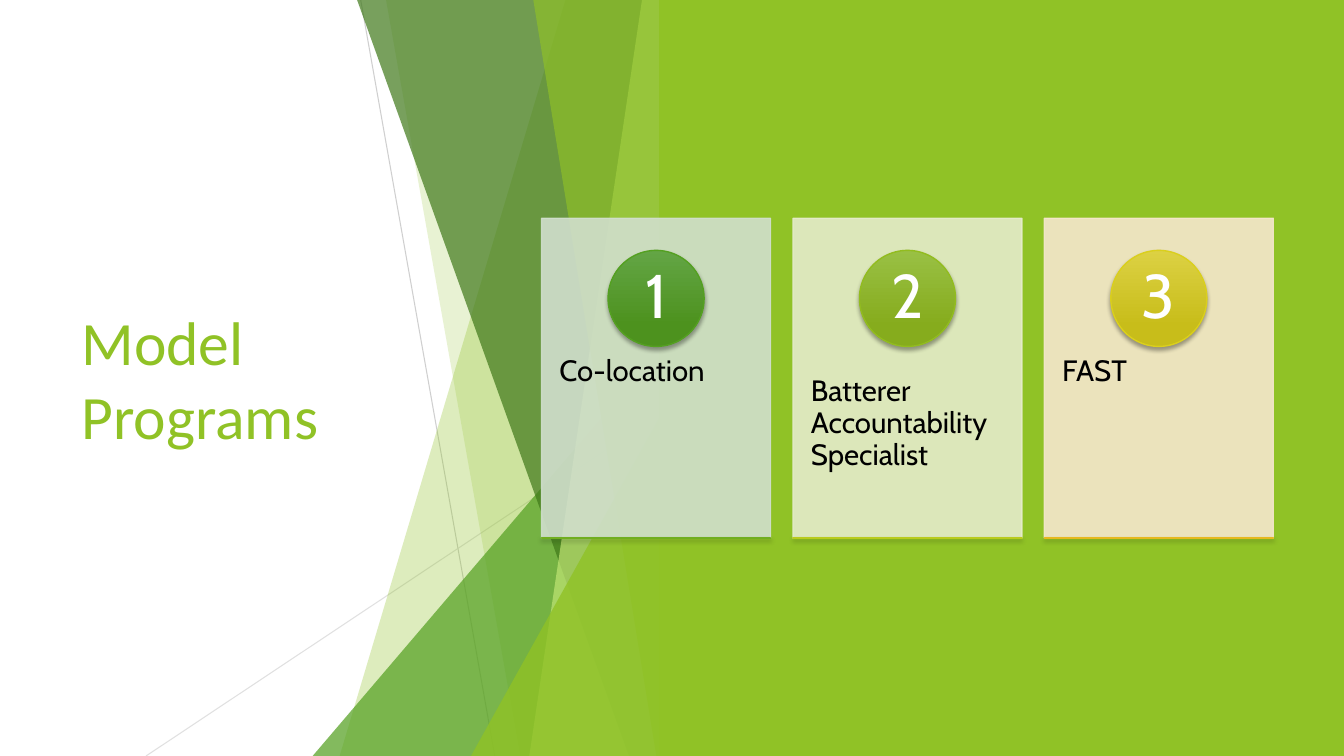
from lxml.etree import SubElement
from pptx import Presentation
from pptx.dml.color import RGBColor
from pptx.enum.shapes import MSO_CONNECTOR, MSO_SHAPE
from pptx.enum.text import MSO_ANCHOR, MSO_AUTO_SIZE, PP_ALIGN
from pptx.oxml.ns import qn
from pptx.util import Cm, Pt

WHITE = RGBColor(0xFF, 0xFF, 0xFF)
BLACK = RGBColor(0x00, 0x00, 0x00)
LIME = RGBColor(0x90, 0xC2, 0x26)
GREEN = RGBColor(0x54, 0xA0, 0x21)
FOREST = RGBColor(0x3F, 0x78, 0x19)
PALE_LIME = RGBColor(0xC0, 0xE4, 0x74)
GREY = RGBColor(0xBF, 0xBF, 0xBF)
LIGHT_GREY = RGBColor(0xD9, 0xD9, 0xD9)
SAGE = RGBColor(0xD1, 0xDF, 0xCD)
MIST = RGBColor(0xE5, 0xEC, 0xCB)
CREAM = RGBColor(0xF5, 0xE7, 0xCD)

# top offset, bottom offset, apex height, colour, opacity
FACETS = [
    (2.67, 8.36, 0, LIME, 30),
    (7.19, 3.81, 0, LIME, 20),
    (0, 9.04, 8.46, GREEN, 72),
    (7.92, 1.07, 0, FOREST, 70),
    (0.74, 3.58, 0, PALE_LIME, 70),
    (3.48, 0.38, 0, LIME, 65),
    (0, 5.05, 9.98, LIME, 80),
]
CARDS = [
    ("Co-location", SAGE, ("63A545", "4D921E", "54A021"), ("7BB244", "679F1E", "71AE20")),
    ("Batterer Accountability Specialist", MIST,
     ("99C044", "86AC1D", "92BC1F"), ("BDCE43", "A9BA1B", "B9CB1E")),
    ("FAST", CREAM, ("DCD143", "C8BD1A", "DACF1C"), ("E7BC43", "D2A91B", "E6B91E")),
]


def set_alpha(s, percent):
    for color in s.element.spPr.findall(".//" + qn("a:srgbClr")):
        SubElement(color, qn("a:alpha"), val=str(percent * 1000))


def paint(s, color, alpha=100, outlined=False):
    s.shadow.inherit = False
    s.fill.solid()
    s.fill.fore_color.rgb = color
    if outlined:
        s.line.color.rgb = color
        s.line.width = Pt(1)
    else:
        s.line.fill.background()
    if alpha < 100:
        set_alpha(s, alpha)


def paint_raised(s, colors):
    start, end, edge = map(RGBColor.from_string, colors)
    s.fill.gradient()
    s.fill.gradient_angle = 270
    for stop, color, position in zip(s.fill.gradient_stops, (start, end), (0, 0.78)):
        stop.color.rgb = color
        stop.position = position
    s.line.color.rgb = edge
    s.line.width = Pt(1)
    s.shadow.inherit = False
    effects = s.element.spPr.find(qn("a:effectLst"))
    shadow = SubElement(effects, qn("a:outerShdw"), blurRad=str(Pt(3)), dist=str(Pt(2)),
                        dir="5400000", algn="ctr", rotWithShape="0")
    color = SubElement(shadow, qn("a:srgbClr"), val="000000")
    SubElement(color, qn("a:alpha"), val="35000")


def add_run(p, text, font, size, color):
    r = p.add_run()
    r.text = text
    r.font.name = font
    r.font.size = Pt(size)
    r.font.color.rgb = color


def add_text(shapes, box, text, size, color, margins, align, anchor):
    tf = shapes.add_textbox(*box).text_frame
    tf.word_wrap = True
    tf.vertical_anchor = anchor
    tf.margin_left = tf.margin_right = margins[0]
    tf.margin_top = tf.margin_bottom = margins[1]
    p = tf.paragraphs[0]
    p.alignment = align
    p.line_spacing = 0.9
    add_run(p, text, "Cabin", size, color)


def add_title(slide, left, top, width, height):
    title = slide.shapes.title
    title.left, title.top, title.width, title.height = left, top, width, height
    tf = title.text_frame
    tf.word_wrap = True
    tf.auto_size = MSO_AUTO_SIZE.NONE
    tf.vertical_anchor = MSO_ANCHOR.MIDDLE
    p = tf.paragraphs[0]
    p.alignment = PP_ALIGN.LEFT
    add_run(p, "Model Programs", "Calibri", 44, LIME)


def add_facets(shapes, left, top, width, height):
    right, bottom = left + width, top + height
    lines = [
        (left + Cm(5.41), top, left + Cm(8.79), bottom, GREY, 75),
        (right, top + Cm(10.24), left, bottom, LIGHT_GREY, 80),
    ]
    for x1, y1, x2, y2, color, alpha in lines:
        line = shapes.add_connector(MSO_CONNECTOR.STRAIGHT, x1, y1, x2, y2)
        line.line.color.rgb = color
        line.line.width = Pt(0.75)
        SubElement(line.element.spPr, qn("a:effectLst"))
        set_alpha(line, alpha)
    for top_offset, bottom_offset, apex, color, alpha in FACETS:
        if apex:
            s = shapes.add_shape(MSO_SHAPE.ISOSCELES_TRIANGLE, right - Cm(bottom_offset),
                                 top + Cm(apex), Cm(bottom_offset), height - Cm(apex))
            s.adjustments[0] = 1
        else:
            outline = shapes.build_freeform(right - Cm(top_offset), top)
            outline.add_line_segments([(right, top), (right, bottom),
                                       (right - Cm(bottom_offset), bottom)])
            s = outline.convert_to_shape()
        paint(s, color, alpha)


def add_panel(shapes, left, top, width, height):
    paint(shapes.add_shape(MSO_SHAPE.RECTANGLE, left, top, width, height), LIME)


def add_card(shapes, left, top, width, height, number, card):
    text, color, badge_colors, bar_colors = card
    paint(shapes.add_shape(MSO_SHAPE.RECTANGLE, left, top, width, height), color, 90, True)
    add_text(shapes, (left, top + Cm(3.07), width, Cm(4.83)), text, 21, BLACK,
             (Cm(0.45), Cm(0.91)), PP_ALIGN.LEFT, MSO_ANCHOR.TOP)
    size, inset = Cm(2.42), Cm(0.35)
    x, y = left + (width - size) // 2, top + Cm(0.81)
    paint_raised(shapes.add_shape(MSO_SHAPE.OVAL, x, y, size, size), badge_colors)
    inner = size - 2 * inset
    add_text(shapes, (x + inset, y + inset, inner, inner), str(number), 44, WHITE,
             (Cm(0.18), Cm(0.03)), PP_ALIGN.CENTER, MSO_ANCHOR.MIDDLE)
    paint_raised(shapes.add_shape(MSO_SHAPE.RECTANGLE, left, top + height, width, 0), bar_colors)


def add_cards(shapes, left, top, width, height):
    card_width = Cm(5.77)
    step = (width - card_width) // (len(CARDS) - 1)
    for i, card in enumerate(CARDS):
        add_card(shapes, left + i * step, top, card_width, height, i + 1, card)


def main():
    prs = Presentation()
    prs.slide_width, prs.slide_height = Cm(33.87), Cm(19.05)
    slide = prs.slides.add_slide(prs.slide_layouts[5])
    slide.background.fill.solid()
    slide.background.fill.fore_color.rgb = WHITE
    add_title(slide, Cm(1.8), Cm(3.84), Cm(9.86), Cm(11.38))
    add_facets(slide.shapes, Cm(3.68), 0, Cm(13.24), prs.slide_height)
    add_panel(slide.shapes, Cm(16.61), 0, prs.slide_width - Cm(16.61), prs.slide_height)
    add_cards(slide.shapes, Cm(13.65), Cm(5.5), Cm(18.44), Cm(8.06))
    prs.save("out.pptx")


if __name__ == "__main__":
    main()
